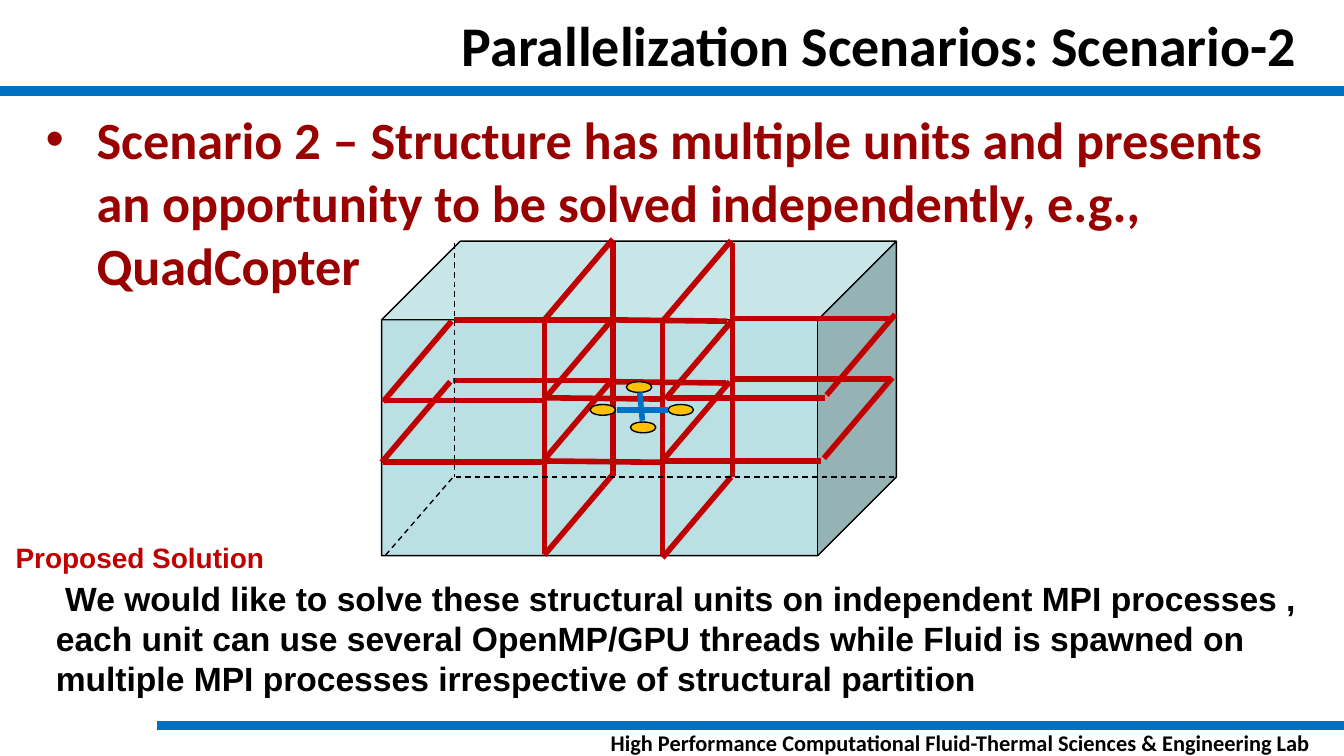
from lxml import etree
from pptx import Presentation
from pptx import util as u
from pptx.dml.color import RGBColor
from pptx.enum import dml, shapes, text
from pptx.oxml.ns import qn

COLS, ROWS, CELL = 100, 56.25, u.Inches(0.1)
COLORS = {"black": "000000", "blue": "0070C0", "maroon": "990000",
          "red": "C00000", "cube": "BBE0E3", "rotor": "FFC000"}

TITLE = dict(at=(1.7, 0.3, 95.8, 6), words="Parallelization Scenarios: Scenario-2",
             size=30, align="RIGHT", anchor="MIDDLE")
SCENARIO = dict(at=(2.4, 7.5, 95.8, 9.4), size=28, color="maroon", bullet="•", indent=(3.8, -3.8),
                words="Scenario 2 – Structure has multiple units and presents an opportunity "
                      "to be solved independently, e.g., QuadCopter")
HEADING = dict(at=(0.4, 39.8, 20.2, 3.3), words="Proposed Solution", size=15, font="Arial",
               color="red", inset=(0.75, 0.4), wrap=False)
SOLUTION = dict(at=(3.4, 42.6, 97.2, 12.9), size=18, font="Arial", inset=(0.75, 0.38), indent=(0, 0.7),
                words="We would like to solve these structural units on independent MPI processes , "
                      "each unit can use several OpenMP/GPU threads while Fluid is spawned on "
                      "multiple MPI processes irrespective of structural partition")
FOOTER = dict(at=(43.8, 54.25, 53.7, 2), size=12, align="RIGHT", inset=(0, 0),
              words="High Performance Computational Fluid-Thermal Sciences & Engineering Lab")

RULES = [((COLS, 54), (11.7, 54)), ((0, 6.77), (COLS, 6.77))]
CUBE = (28.4, 17.95, 38.3, 23.4)
PARTITIONS = [
    ((11.8, 0), [(49.3, 34.3), (54.5, 28.2), (28.5, 34.4), (33.7, 28.3),
                 (28.7, 29.8), (33.8, 23.8), (49.6, 29.6), (54.7, 23.7)]),
    ((8.7, 0.1), [(40.7, 29.6), (45.4, 23.8), (40.5, 34.3), (45.3, 28.4)]),
    ((0, 17.4), [(54.5, 18.1), (40.5, 23.8), (45.6, 18), (49.3, 23.9)]),
    ((5.1, -6), [(49.3, 23.9), (40.5, 23.8), (49.2, 34.4), (61.3, 34.1), (28.4, 34.4),
                 (40.5, 34.2), (28.5, 29.9), (40.6, 29.6), (49.5, 29.7), (61.5, 29.4),
                 (49.3, 41.5), (40.5, 41.3)]),
]
HIDDEN_EDGES = [((33.8, 18.1), (33.8, 35.5)), ((33.9, 35.5), (66.7, 35.5)),
                ((28.7, 41.3), (33.8, 35.4))]
ROTOR_SIZE = (1.9, 0.8)
ROTORS = [(43.9, 30.1), (46.9, 31.4), (46.6, 28.4), (49.7, 30.1)]
ARMS = [((45.9, 30.5), (49.7, 30.5)), ((47.6, 29.2), (47.8, 31.3))]


def cells(values):
    return [round(v * CELL) for v in values]


def rgb(name):
    return RGBColor.from_string(COLORS[name])


def add_words(s, at, words, size, font="Calibri", color="black", align="LEFT", anchor="TOP",
              inset=(1, 0.5), wrap=True, indent=None, bullet=None):
    tf = s.shapes.add_textbox(*cells(at)).text_frame
    tf.word_wrap = wrap
    tf.vertical_anchor = text.MSO_ANCHOR[anchor]
    tf.margin_left, tf.margin_top = cells(inset)
    tf.margin_right, tf.margin_bottom = cells(inset)
    p = tf.paragraphs[0]
    p.alignment = text.PP_ALIGN[align]
    if indent:
        pPr = p._p.get_or_add_pPr()
        for key, value in zip(("marL", "indent"), cells(indent)):
            pPr.set(key, str(value))
        if bullet:
            etree.SubElement(pPr, qn("a:buFont")).set("typeface", "Arial")
            etree.SubElement(pPr, qn("a:buChar")).set("char", bullet)
    r = p.add_run()
    r.text = words
    r.font.name, r.font.size, r.font.bold = font, u.Pt(size), True
    r.font.color.rgb = rgb(color)


def add_line(parent, start, end, color, width, dashed=False):
    line = parent.shapes.add_connector(shapes.MSO_CONNECTOR.STRAIGHT, *cells(start + end))
    line.line.color.rgb = rgb(color)
    line.line.width = u.Pt(width)
    if dashed:
        line.line.dash_style = dml.MSO_LINE.DASH
    etree.SubElement(line._element.spPr, qn("a:effectLst"))


def add_solid(parent, kind, at, fill):
    sp = parent.shapes.add_shape(shapes.MSO_SHAPE[kind], *cells(at))
    sp.shadow.inherit = False
    sp.fill.solid()
    sp.fill.fore_color.rgb = rgb(fill)
    sp.line.color.rgb = rgb("black")
    sp.line.width = u.Pt(0.75)


def add_domain(s):
    domain = s.shapes.add_group_shape()
    add_solid(domain, "CUBE", CUBE, "cube")
    for (dx, dy), starts in PARTITIONS:
        for x, y in starts:
            add_line(domain, (x, y), (x + dx, y + dy), "red", 3)
    for start, end in HIDDEN_EDGES:
        add_line(domain, start, end, "black", 0.75, dashed=True)
    for corner in ROTORS:
        add_solid(domain, "OVAL", corner + ROTOR_SIZE, "rotor")
    for start, end in ARMS:
        add_line(domain, start, end, "blue", 3)


def main():
    prs = Presentation()
    prs.slide_width, prs.slide_height = cells((COLS, ROWS))
    s = prs.slides.add_slide(prs.slide_layouts[6])
    for start, end in RULES:
        add_line(s, start, end, "blue", 5)
    for block in (FOOTER, SCENARIO, TITLE, HEADING, SOLUTION):
        add_words(s, **block)
    add_domain(s)
    prs.save("out.pptx")


if __name__ == "__main__":
    main()
